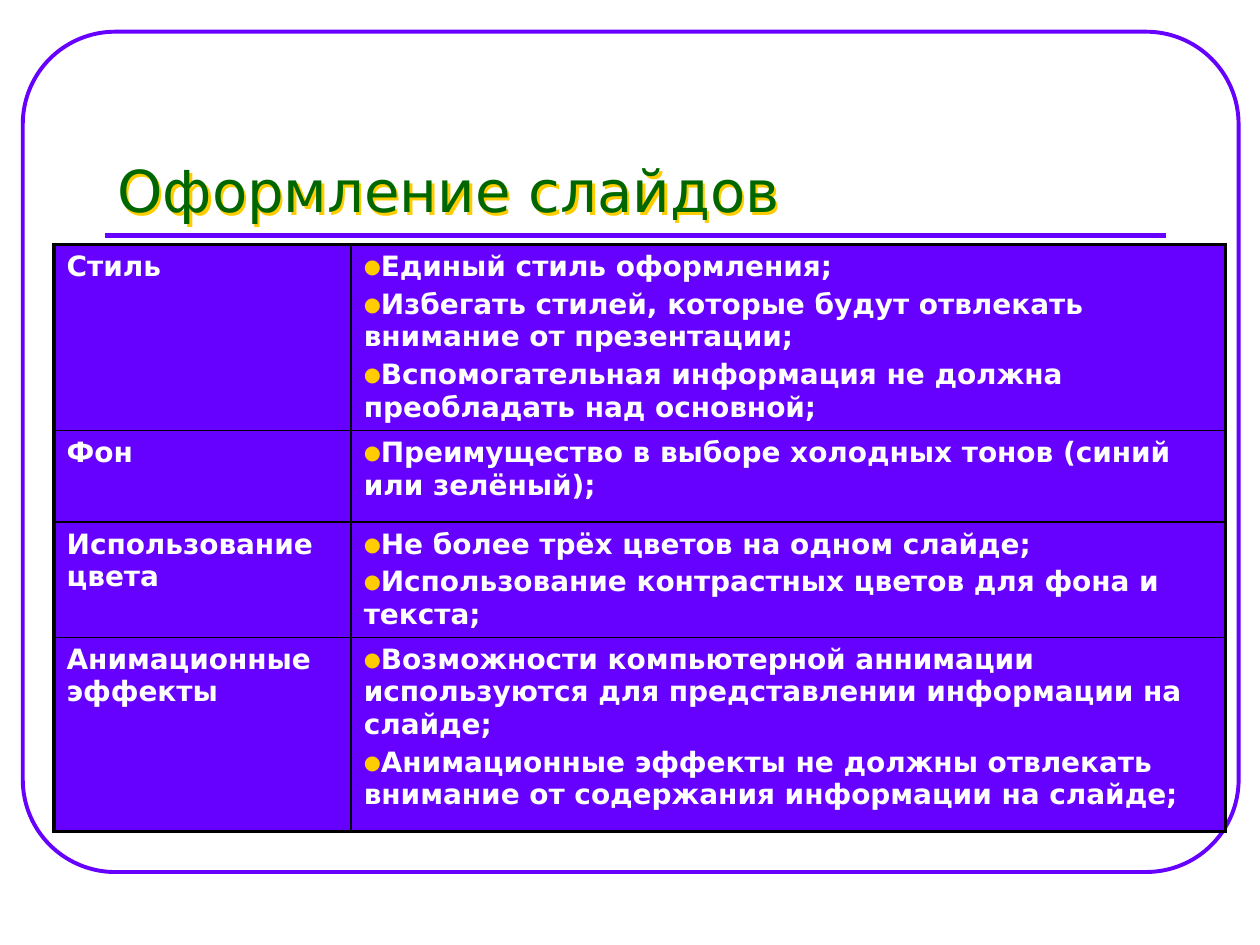
from lxml.etree import SubElement as Sub
from pptx import Presentation
from pptx.dml.color import RGBColor
from pptx.enum.shapes import MSO_CONNECTOR as Link, MSO_SHAPE as Form
from pptx.enum.text import MSO_ANCHOR as Anchor, PP_ALIGN as Align
from pptx.oxml import parse_xml
from pptx.oxml.ns import nsdecls, qn
from pptx.util import Cm, Pt

VIOLET = RGBColor(0x66, 0x00, 0xFF)
GREEN = RGBColor(0x00, 0x66, 0x00)
GOLD = RGBColor(0xFF, 0xCC, 0x00)
WHITE = RGBColor(0xFF, 0xFF, 0xFF)
BLACK = RGBColor(0x00, 0x00, 0x00)
FONT = "DejaVu Sans"
THIN, THICK = Pt(1), Pt(2.25)

COLS = [5.99, 17.63]
ROWS = [
    (3.75, "Стиль", [
        "Единый стиль оформления;",
        "Избегать стилей, которые будут отвлекать внимание от презентации;",
        "Вспомогательная информация не должна преобладать над основной;"]),
    (1.84, "Фон", [
        "Преимущество в выборе холодных тонов (синий или зелёный);"]),
    (2.33, "Использование цвета", [
        "Не более трёх цветов на одном слайде;",
        "Использование контрастных цветов для фона и текста;"]),
    (3.91, "Анимационные эффекты", [
        "Возможности компьютерной аннимации используются для представлении "
        "информации на слайде;",
        "Анимационные эффекты не должны отвлекать внимание от содержания "
        "информации на слайде;"]),
]


def add_run(para, text, size, color, bold=False):
    run = para.add_run()
    run.text = text
    font = run.font
    font.name, font.size, font.bold = FONT, Pt(size), bold
    font.color.rgb = color


def add_frame(slide):
    frame = slide.shapes.add_shape(
        Form.ROUNDED_RECTANGLE, Cm(0.46), Cm(0.64), Cm(24.51), Cm(16.94))
    frame.adjustments[0] = 0.11
    frame.shadow.inherit = False
    frame.fill.background()
    frame.line.color.rgb = VIOLET
    frame.line.width = THICK


def add_rule(slide):
    rule = slide.shapes.add_connector(
        Link.STRAIGHT, Cm(2.11), Cm(4.75), Cm(23.5), Cm(4.75))
    rule.line.color.rgb = VIOLET
    rule.line.width = Pt(3)
    Sub(rule._element.spPr, qn("a:effectLst"))


def set_title(slide, text):
    title = slide.shapes.title
    title.left, title.top = Cm(2.11), Cm(1.47)
    title.width, title.height = Cm(21.39), Cm(3.18)
    body = title.text_frame
    body.vertical_anchor = Anchor.BOTTOM
    para = body.paragraphs[0]
    para.alignment = Align.LEFT
    add_run(para, text, 33, GREEN)
    # Hard gold shadow, down and to the right
    title._element.spPr.append(parse_xml(
        f'<a:effectLst {nsdecls("a")}><a:outerShdw dist="{Pt(2)}" '
        f'dir="2700000" algn="ctr" rotWithShape="0"><a:srgbClr val="{GOLD}"/>'
        '</a:outerShdw></a:effectLst>'))


def add_bullet(para):
    props = para._p.get_or_add_pPr()
    props.set("marL", "0")
    props.set("indent", "0")
    color = Sub(props, qn("a:buClr"))
    Sub(color, qn("a:srgbClr"), val=str(GOLD))
    Sub(props, qn("a:buSzPct"), val="70000")
    Sub(props, qn("a:buFont"), typeface=FONT)
    Sub(props, qn("a:buChar"), char="●")


def set_edges(cell, edges):
    props = cell._tc.get_or_add_tcPr()
    for spot, (side, width) in enumerate(edges.items()):
        props.insert(spot, parse_xml(
            f'<a:ln{side} {nsdecls("a")} w="{width}"><a:solidFill>'
            f'<a:srgbClr val="{BLACK}"/></a:solidFill></a:ln{side}>'))


def fill_cell(cell, lines, bullet):
    cell.fill.solid()
    cell.fill.fore_color.rgb = VIOLET
    body = cell.text_frame
    for spot, line in enumerate(lines):
        para = body.add_paragraph() if spot else body.paragraphs[0]
        para.space_before = Pt(3.2)
        if bullet:
            add_bullet(para)
        add_run(para, line, 16, WHITE, bold=True)


def add_grid(slide):
    high = sum(row[0] for row in ROWS)
    table = slide.shapes.add_table(
        len(ROWS), len(COLS), Cm(1.09), Cm(4.93),
        Cm(sum(COLS)), Cm(high)).table
    for col, wide in zip(table.columns, COLS):
        col.width = Cm(wide)
    last = len(ROWS) - 1
    for r, (tall, name, points) in enumerate(ROWS):
        table.rows[r].height = Cm(tall)
        for c, lines in enumerate([[name], points]):
            cell = table.cell(r, c)
            fill_cell(cell, lines, bullet=c == 1)
            # Thick outer border, thin inner lines
            set_edges(cell, {
                "L": THICK if c == 0 else THIN,
                "R": THICK if c == 1 else THIN,
                "T": THICK if r == 0 else THIN,
                "B": THICK if r == last else THIN})


def main():
    deck = Presentation()
    deck.slide_width, deck.slide_height = Cm(25.4), Cm(19.05)
    slide = deck.slides.add_slide(deck.slide_layouts[5])
    add_frame(slide)
    add_rule(slide)
    set_title(slide, "Оформление слайдов")
    add_grid(slide)
    deck.save("out.pptx")


if __name__ == "__main__":
    main()
